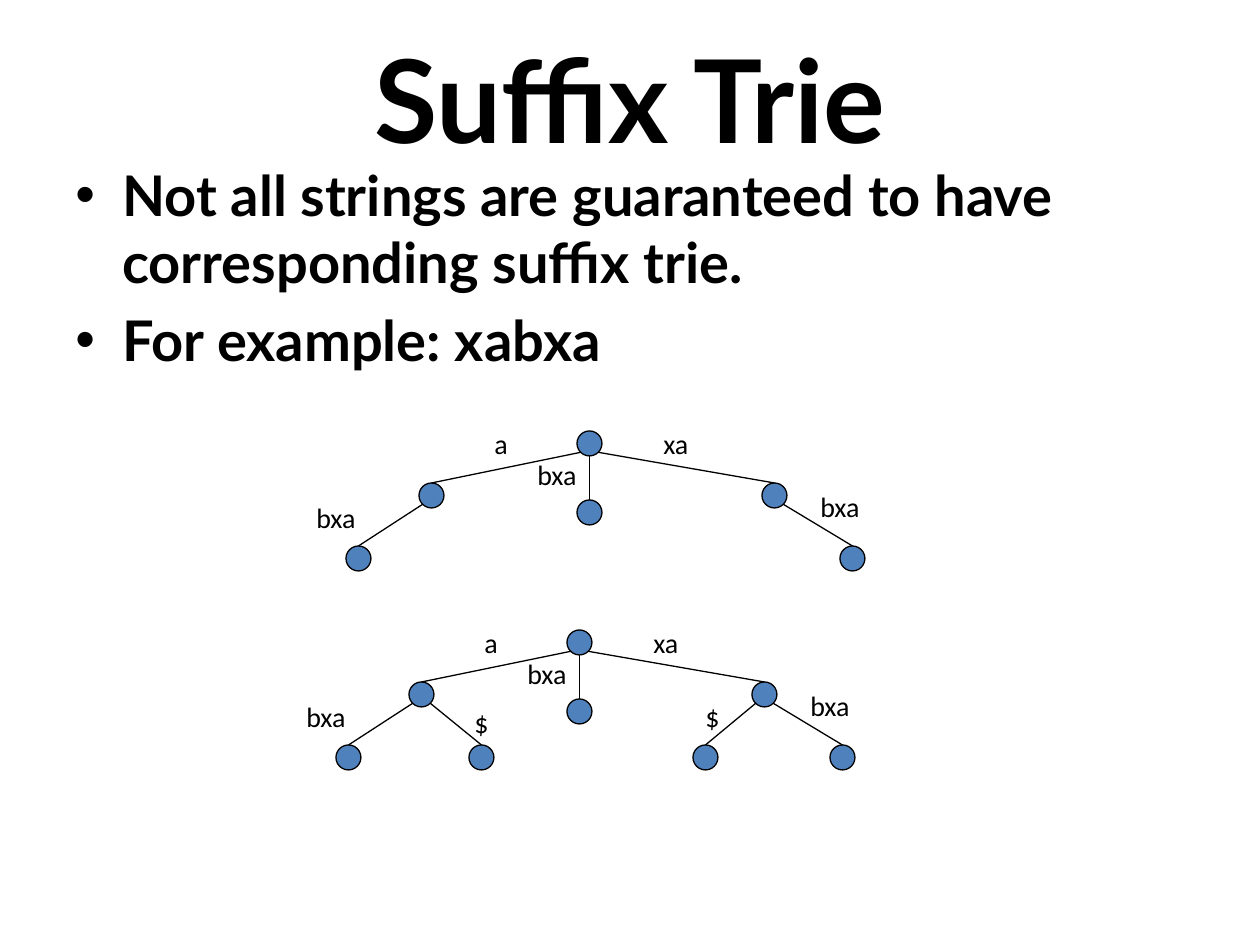
from dataclasses import dataclass
from math import sqrt
from lxml.etree import SubElement
from pptx import Presentation
from pptx.dml.color import RGBColor
from pptx.enum.shapes import MSO_CONNECTOR, MSO_SHAPE
from pptx.enum.text import MSO_ANCHOR, PP_ALIGN
from pptx.oxml.ns import qn
from pptx.util import Emu, Pt


@dataclass(frozen=True)
class Theme:
    ink: RGBColor = RGBColor(0, 0, 0)
    node: RGBColor = RGBColor(0x4F, 0x81, 0xBD)
    heading_font: str = "Lato"
    label_font: str = "Calibri"
    title: int = 66
    body: int = 32
    label: int = 16
    line: float = 0.75


THEME = Theme()
SCALE = 914400 / 126
NODE = 25
LABEL_HEIGHT = 47

NODES = {
    "root": (0, 0),
    "a": (-158, 52),
    "xa": (185, 52),
    "bxa": (0, 69),
    "a-bxa": (-231, 115),
    "xa-bxa": (263, 115),
}
EDGES = [
    ("root", "a", -1),
    ("root", "xa", 1),
    ("root", "bxa", 0),
    ("a", "a-bxa", -1),
    ("xa", "xa-bxa", 1),
]
LABELS = [
    ("a", -95, -11, 63),
    ("xa", 74, -11, 84),
    ("bxa", -52, 20, 84),
    ("bxa", -273, 63, 84),
    ("bxa", 231, 52, 84),
]
END_NODES = {"a-$": (-98, 115), "xa-$": (126, 115)}
END_EDGES = [("a", "a-$", 1), ("xa", "xa-$", -1)]
END_LABELS = [("$", -105, 69, 42), ("$", 126, 63, 42)]


def px(n):
    return Emu(round(n * SCALE))


def add_run(p, text, font, size, bold=False):
    r = p.add_run()
    r.text = text
    r.font.name = font
    r.font.size = Pt(size)
    r.font.bold = bold
    r.font.color.rgb = THEME.ink


def add_text_frame(shapes, x, y, w, h):
    tf = shapes.add_textbox(px(x), px(y), px(w), px(h)).text_frame
    tf.word_wrap = True
    return tf


def add_title(shapes, text):
    tf = add_text_frame(shapes, 63, 19, 1134, 157)
    tf.vertical_anchor = MSO_ANCHOR.MIDDLE
    p = tf.paragraphs[0]
    p.alignment = PP_ALIGN.CENTER
    add_run(p, text, THEME.heading_font, THEME.title, True)


def add_bullets(shapes, items):
    tf = add_text_frame(shapes, 63, 154, 1134, 321)
    for i, text in enumerate(items):
        p = tf.paragraphs[0] if i == 0 else tf.add_paragraph()
        p.space_before = Pt(THEME.body * 0.2)
        pPr = p._p.get_or_add_pPr()
        pPr.set("marL", str(px(47)))
        pPr.set("indent", str(px(-47)))
        SubElement(pPr, qn("a:buFont"), typeface="Arial")
        SubElement(pPr, qn("a:buChar"), char="•")
        add_run(p, text, THEME.heading_font, THEME.body, True)


def add_node(shapes, x, y):
    sp = shapes.add_shape(MSO_SHAPE.OVAL, px(x), px(y), px(NODE), px(NODE))
    sp.shadow.inherit = False
    sp.fill.solid()
    sp.fill.fore_color.rgb = THEME.node
    sp.line.color.rgb = THEME.ink
    sp.line.width = Pt(THEME.line)
    return sp


def add_edge(shapes, parent, child, side):
    radius = parent.width / 2
    reach = radius / sqrt(2) if side else radius
    x = round(parent.left + radius + side * reach)
    y = round(parent.top + radius + reach)
    line = shapes.add_connector(MSO_CONNECTOR.STRAIGHT, x, y, child.left, child.top)
    line.end_connect(child, 0)
    line.line.color.rgb = THEME.ink
    line.line.width = Pt(THEME.line)
    SubElement(line._element.spPr, qn("a:effectLst"))


def add_label(shapes, text, x, y, w):
    tf = add_text_frame(shapes, x, y, w, LABEL_HEIGHT)
    add_run(tf.paragraphs[0], text, THEME.label_font, THEME.label)


def add_tree(s, x, y, nodes, edges, labels):
    shapes = s.shapes.add_group_shape().shapes
    placed = {name: add_node(shapes, x + dx, y + dy) for name, (dx, dy) in nodes.items()}
    for parent, child, side in edges:
        add_edge(shapes, placed[parent], placed[child], side)
    for text, dx, dy, w in labels:
        add_label(shapes, text, x + dx, y + dy, w)


def main():
    prs = Presentation()
    prs.slide_width, prs.slide_height = px(1260), px(945)
    s = prs.slides.add_slide(prs.slide_layouts[6])
    add_title(s.shapes, "Suffix Trie")
    add_bullets(s.shapes, [
        "Not all strings are guaranteed to have corresponding suffix trie.",
        "For example: xabxa",
    ])
    add_tree(s, 577, 431, NODES, EDGES, LABELS)
    add_tree(s, 567, 630, NODES | END_NODES, EDGES + END_EDGES, LABELS + END_LABELS)
    prs.save("out.pptx")


if __name__ == "__main__":
    main()
